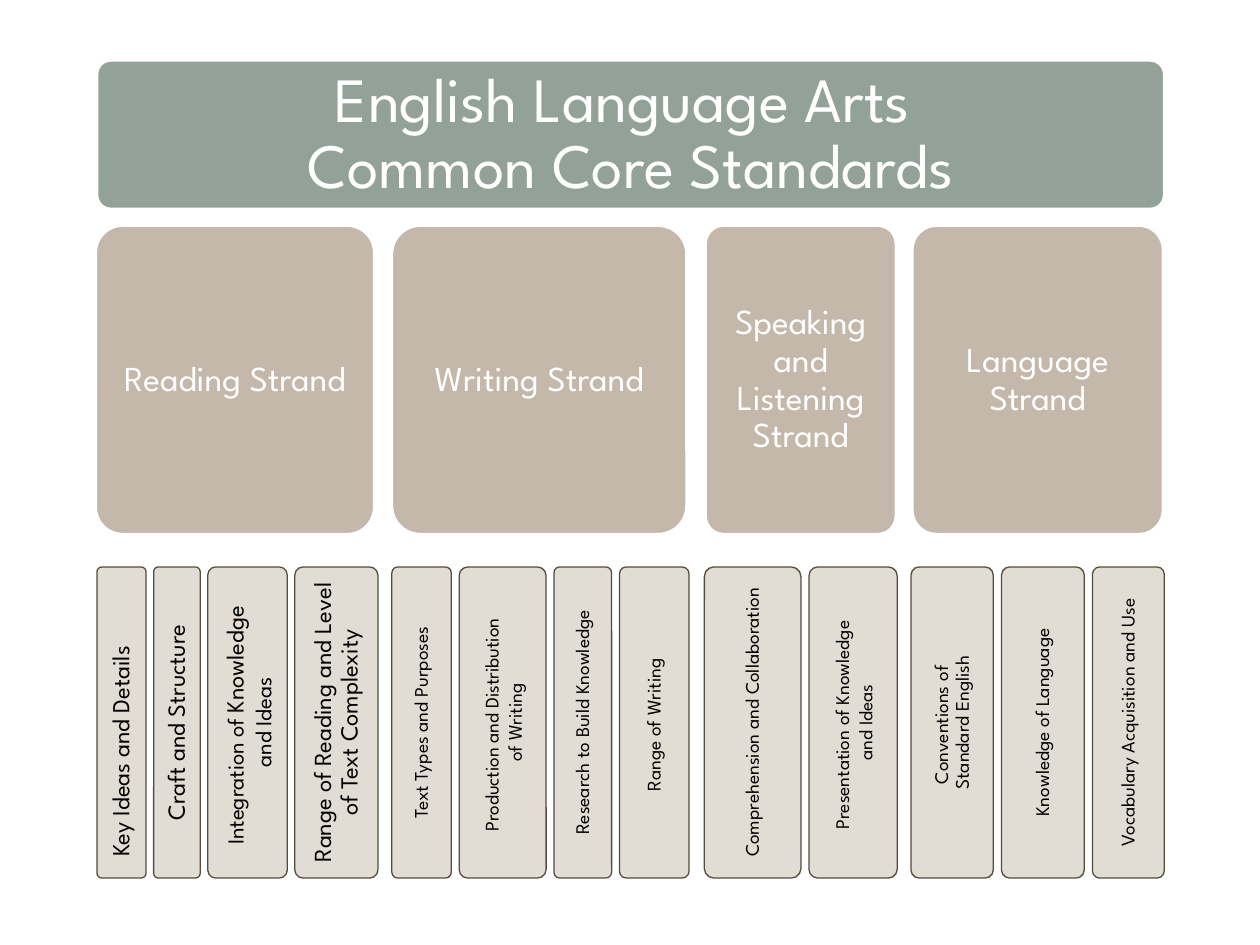
from dataclasses import dataclass

import pptx
import pptx.dml.color
import pptx.enum.shapes
import pptx.enum.text
import pptx.util

Pt = pptx.util.Pt
ALIGN = pptx.enum.text.PP_ALIGN


@dataclass(frozen=True)
class Theme:
    font: str = "League Spartan"
    banner: str = "93A299"
    strand: str = "C3B8A9"
    standard: str = "E1DCD4"
    border: str = "564B3C"
    light: str = "FFFFFF"
    dark: str = "000000"
    title_size: float = 36
    strand_size: float = 20
    large_size: float = 14
    medium_size: float = 13
    small_size: float = 11


THEME = Theme()


@dataclass(frozen=True)
class Standard:
    """One upright card; each line is a string or a list of (text, size) runs."""
    width: float
    lines: tuple
    size: float = THEME.small_size
    inset: float = 3.6
    spacing: float = 0.9
    start_indent: float = 0


@dataclass(frozen=True)
class Strand:
    left: float
    width: float
    name: str
    row_left: float
    standards: tuple


LARGE = {"size": THEME.large_size, "inset": 4.3}
STRANDS = (
    Strand(54, 160.6, "Reading Strand", 55.4, (
        Standard(28.1, ("Key Ideas and Details",), start_indent=7, **LARGE),
        Standard(26.6, ("Craft and Structure",), **LARGE),
        Standard(45.4, (
            [("Integration of ", THEME.medium_size),
             ("Knowledge", THEME.large_size),
             (" ", THEME.medium_size)],
            "and Ideas"), size=THEME.medium_size, spacing=1.0),
        Standard(47.5, ("Range of Reading and Level of Text Complexity",), **LARGE),
    )),
    Strand(223.2, 169.9, "Writing Strand", 223.9, (
        Standard(34, ("Text Types and Purposes",)),
        Standard(49.7, ("Production and Distribution ", "of Writing"), spacing=1.0),
        Standard(33, ("Research to Build Knowledge",)),
        Standard(39.8, ("Range of Writing ",)),
    )),
    Strand(402.5, 110.2, "Speaking and Listening Strand", 402.5, (
        Standard(55.2, ("Comprehension and Collaboration",)),
        Standard(50.4, ("Presentation of Knowledge ", "and Ideas"), spacing=1.0),
    )),
    Strand(520.6, 144.7, "Language Strand", 520.6, (
        Standard(47, ("Conventions of ", "Standard English")),
        Standard(47.3, ("Knowledge of Language",)),
        Standard(41, ("Vocabulary Acquisition and Use",)),
    )),
)


def rgb(code):
    return pptx.dml.color.RGBColor.from_string(code)


def add_card(slide, box, fill, border, border_width, inset):
    card = slide.shapes.add_shape(
        pptx.enum.shapes.MSO_SHAPE.ROUNDED_RECTANGLE, *map(Pt, box))
    card.adjustments[0] = 0.1
    card.shadow.inherit = False
    card.fill.solid()
    card.fill.fore_color.rgb = rgb(fill)
    card.line.color.rgb = rgb(border)
    card.line.width = Pt(border_width)
    frame_format = {
        "word_wrap": True,
        "vertical_anchor": pptx.enum.text.MSO_ANCHOR.MIDDLE,
        **{f"margin_{side}": Pt(inset) for side in ("left", "top", "right", "bottom")},
    }
    for name, value in frame_format.items():
        setattr(card.text_frame, name, value)
    return card


def write_lines(frame, lines, size, color, spacing, align=ALIGN.CENTER):
    for index, line in enumerate(lines):
        paragraph = frame.add_paragraph() if index else frame.paragraphs[0]
        paragraph.alignment = align
        paragraph.line_spacing = spacing
        runs = [(line, size)] if isinstance(line, str) else line
        for text, run_size in runs:
            run = paragraph.add_run()
            run.text = text
            run.font.color.rgb = rgb(color)
            for name, value in {"name": THEME.font, "size": Pt(run_size)}.items():
                setattr(run.font, name, value)


def add_banner(slide, box):
    banner = add_card(slide, box, THEME.banner, THEME.light, 3, 10.8)
    write_lines(banner.text_frame,
                ("English Language Arts ", "Common Core Standards"),
                THEME.title_size, THEME.light, Pt(38))


def add_strand(slide, box, name):
    card = add_card(slide, box, THEME.strand, THEME.light, 3, 6)
    write_lines(card.text_frame, (name,), THEME.strand_size, THEME.light, 0.9)


def add_standard(slide, box, standard):
    card = add_card(slide, box, THEME.standard, THEME.border, 0.75, standard.inset)
    frame = card.text_frame
    card._element.txBody.bodyPr.set("vert", "vert270")
    align = ALIGN.LEFT if standard.start_indent else ALIGN.CENTER
    write_lines(frame, standard.lines, standard.size, THEME.dark,
                standard.spacing, align)
    if standard.start_indent:
        properties = frame.paragraphs[0]._p.get_or_add_pPr()
        properties.set("marL", str(Pt(standard.start_indent)))
        properties.set("indent", "0")


def add_standards_row(slide, box, standards):
    """Spread the cards over the box with equal gaps."""
    left, top, width, height = box
    gap = (width - sum(s.width for s in standards)) / (len(standards) - 1)
    for standard in standards:
        add_standard(slide, (left, top, standard.width, height), standard)
        left += standard.width + gap


def main():
    deck = pptx.Presentation()
    deck.slide_width, deck.slide_height = Pt(720), Pt(540)
    slide = deck.slides.add_slide(deck.slide_layouts[6])
    add_banner(slide, (54.7, 33.8, 611.3, 86.4))
    for strand in STRANDS:
        add_strand(slide, (strand.left, 128.2, strand.width, 177.8), strand.name)
        add_standards_row(slide, (strand.row_left, 324, strand.width, 177.8),
                          strand.standards)
    deck.save("out.pptx")


if __name__ == "__main__":
    main()
